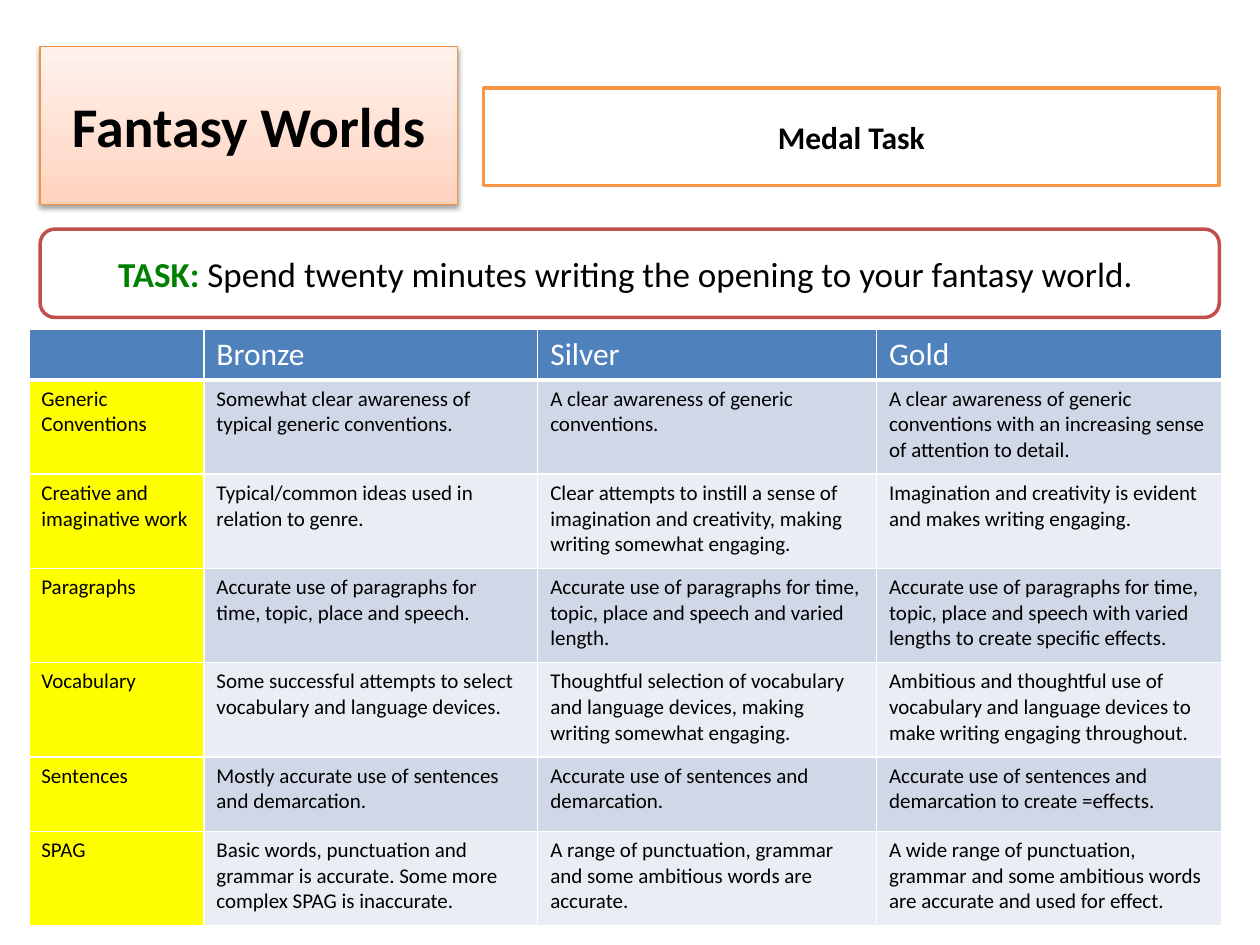
"""Build the Fantasy Worlds medal task slide."""
from dataclasses import dataclass

from lxml import etree
from pptx import Presentation
from pptx.dml.color import RGBColor
from pptx.enum.shapes import MSO_SHAPE
from pptx.enum.text import MSO_ANCHOR, PP_ALIGN
from pptx.oxml import parse_xml
from pptx.oxml.ns import nsdecls, qn
from pptx.util import Cm, Pt

RECTANGLE = MSO_SHAPE.RECTANGLE
ROUNDED = MSO_SHAPE.ROUNDED_RECTANGLE
MIDDLE = MSO_ANCHOR.MIDDLE
CENTER = PP_ALIGN.CENTER

COLORS = {
    "black": "000000", "white": "FFFFFF", "green": "008000", "yellow": "FFFF00",
    "title line": "F69240", "orange": "F79646", "red": "C0504D",
    "header": "4F81BD", "dark band": "D0D8E8", "light band": "E9EDF4",
    "peach": "FFD2BD", "pale peach": "FFDED0", "cream": "FFF2ED",
}
TITLE_STOPS = ((0, "peach"), (35, "pale peach"), (100, "cream"))

COLUMN_WIDTHS = (3.53, 6.73, 6.83, 6.96)
ROW_HEIGHTS = (1.02, 1.9, 1.9, 1.9, 1.9, 1.5, 1.9)
CRITERIA = (
    ("", "Bronze", "Silver", "Gold"),
    ("Generic Conventions",
     "Somewhat clear awareness of typical generic conventions.",
     "A clear awareness of generic conventions.",
     "A clear awareness of generic conventions with an increasing sense of attention to detail."),
    ("Creative and imaginative work",
     "Typical/common ideas used in relation to genre.",
     "Clear attempts to instill a sense of imagination and creativity, making writing somewhat engaging.",
     "Imagination and creativity is evident and makes writing engaging."),
    ("Paragraphs",
     "Accurate use of paragraphs for time, topic, place and speech.",
     "Accurate use of paragraphs for time, topic, place and speech and varied length.",
     "Accurate use of paragraphs for time, topic, place and speech with varied lengths to create specific effects."),
    ("Vocabulary",
     "Some successful attempts to select vocabulary and language devices.",
     "Thoughtful selection of vocabulary and language devices, making writing somewhat engaging.",
     "Ambitious and thoughtful use of vocabulary and language devices to make writing engaging throughout."),
    ("Sentences",
     "Mostly accurate use of sentences and demarcation.",
     "Accurate use of sentences and demarcation.",
     "Accurate use of sentences and demarcation to create =effects."),
    ("SPAG",
     "Basic words, punctuation and grammar is accurate. Some more complex SPAG is inaccurate.",
     "A range of punctuation, grammar and some ambitious words are accurate.",
     "A wide range of punctuation, grammar and some ambitious words are accurate and used for effect."),
)


@dataclass(frozen=True)
class TextRun:
    """A piece of text with its own weight and colour."""
    text: str
    bold: bool = True
    color: str = "black"


@dataclass(frozen=True)
class Box:
    """An outlined box with centred text; lengths in centimetres."""
    left: float
    top: float
    width: float
    height: float
    line: str
    line_width: float
    size: int
    runs: tuple[TextRun, ...]
    kind: int = RECTANGLE


TITLE = Box(0.81, 0.94, 8.41, 3.18, "title line", 0.75, 32, (TextRun("Fantasy Worlds"),))
MEDAL = Box(9.75, 1.78, 14.83, 1.96, "orange", 2, 18, (TextRun("Medal Task"),))
TASK = Box(0.81, 4.62, 23.77, 1.78, "red", 2, 20, (
    TextRun("TASK: ", color="green"),
    TextRun("Spend twenty minutes writing the opening to your fantasy world. ", bold=False),
), ROUNDED)


def rgb(name: str) -> RGBColor:
    """Look up a named colour."""
    return RGBColor.from_string(COLORS[name])


def add_run(paragraph, content: TextRun, size: int) -> None:
    """Add a formatted run to a paragraph."""
    run = paragraph.add_run()
    run.text = content.text
    formats = {"name": "Calibri", "size": Pt(size), "bold": content.bold}
    for attribute, value in formats.items():
        setattr(run.font, attribute, value)
    run.font.color.rgb = rgb(content.color)


def add_box(slide, box: Box):
    """Draw a box and return its shape."""
    shape = slide.shapes.add_shape(
        box.kind, Cm(box.left), Cm(box.top), Cm(box.width), Cm(box.height))
    shape.shadow.inherit = False
    shape.fill.solid()
    shape.fill.fore_color.rgb = rgb("white")
    shape.line.color.rgb = rgb(box.line)
    shape.line.width = Pt(box.line_width)
    shape.text_frame.word_wrap = True
    shape.text_frame.vertical_anchor = MIDDLE
    paragraph = shape.text_frame.paragraphs[0]
    paragraph.alignment = CENTER
    for content in box.runs:
        add_run(paragraph, content, box.size)
    return shape


def style_title(shape) -> None:
    """Give the title box its gradient and soft shadow."""
    properties = shape.element.spPr
    stops = "".join(
        f'<a:gs pos="{position * 1000}"><a:srgbClr val="{COLORS[name]}"/></a:gs>'
        for position, name in TITLE_STOPS)
    gradient = parse_xml(
        f'<a:gradFill {nsdecls("a")} rotWithShape="1"><a:gsLst>{stops}</a:gsLst>'
        '<a:lin ang="16200000" scaled="0"/></a:gradFill>')
    properties.replace(properties.find(qn("a:solidFill")), gradient)
    properties.find(qn("a:effectLst")).append(parse_xml(
        f'<a:outerShdw {nsdecls("a")} blurRad="40000" dist="20000" dir="5400000" '
        f'rotWithShape="0"><a:srgbClr val="{COLORS["black"]}">'
        '<a:alpha val="38000"/></a:srgbClr></a:outerShdw>'))


def add_borders(cell, bottom: float) -> None:
    """Put white lines around a cell."""
    properties = cell._tc.get_or_add_tcPr()
    for side, width in {"L": 1, "R": 1, "T": 1, "B": bottom}.items():
        line = etree.SubElement(properties, qn(f"a:ln{side}"), w=str(Pt(width)))
        fill = etree.SubElement(line, qn("a:solidFill"))
        etree.SubElement(fill, qn("a:srgbClr"), val=COLORS["white"])


def cell_fill(row: int, column: int) -> str:
    """Choose the fill colour for a place in the table."""
    if row == 0:
        return "header"
    if column == 0:
        return "yellow"
    return "dark band" if row % 2 else "light band"


def add_criteria_table(slide) -> None:
    """Draw the table of medal criteria."""
    table = slide.shapes.add_table(
        len(ROW_HEIGHTS), len(COLUMN_WIDTHS), Cm(0.58), Cm(6.63),
        Cm(sum(COLUMN_WIDTHS)), Cm(sum(ROW_HEIGHTS))).table
    for column, width in zip(table.columns, COLUMN_WIDTHS):
        column.width = Cm(width)
    for row, height in zip(table.rows, ROW_HEIGHTS):
        row.height = Cm(height)
    for row, texts in enumerate(CRITERIA):
        size, color, bottom = (12, "black", 1) if row else (18, "white", 3)
        for column, text in enumerate(texts):
            cell = table.cell(row, column)
            add_borders(cell, bottom)
            cell.fill.solid()
            cell.fill.fore_color.rgb = rgb(cell_fill(row, column))
            if text:
                add_run(cell.text_frame.paragraphs[0], TextRun(text, False, color), size)


def main() -> None:
    """Build and save the presentation."""
    presentation = Presentation()
    presentation.slide_width = Cm(25.4)
    presentation.slide_height = Cm(19.05)
    slide = presentation.slides.add_slide(presentation.slide_layouts[6])
    style_title(add_box(slide, TITLE))
    for box in (MEDAL, TASK):
        add_box(slide, box)
    add_criteria_table(slide)
    presentation.save("out.pptx")


if __name__ == "__main__":
    main()
